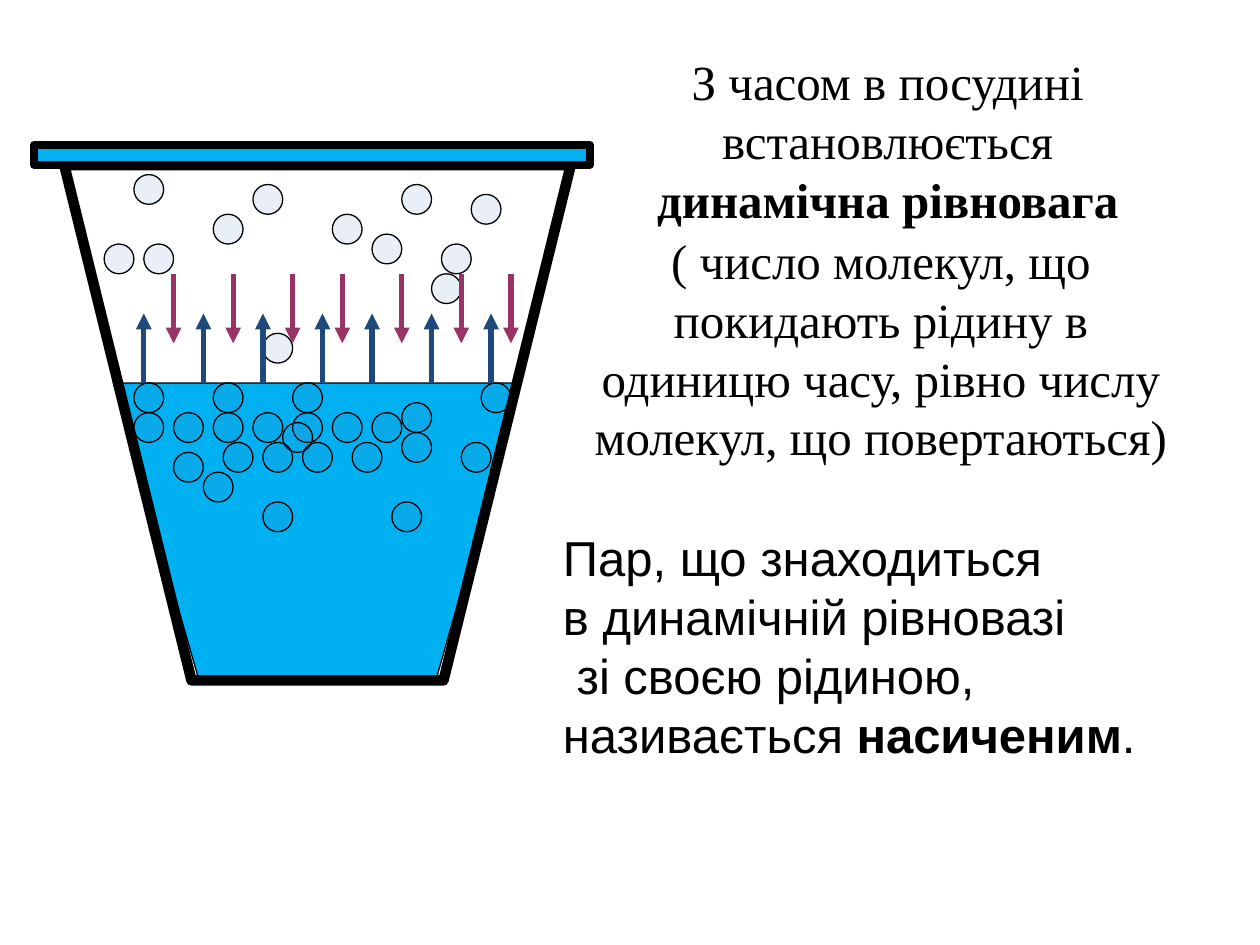
from pptx import Presentation
from pptx.dml.color import RGBColor
from pptx.enum.shapes import MSO_CONNECTOR, MSO_SHAPE
from pptx.enum.text import MSO_AUTO_SIZE, PP_ALIGN
from pptx.oxml.ns import qn
from pptx.util import Inches, Mm, Pt
from lxml.etree import SubElement

# Content: (left, top, width, height), font, alignment, paragraphs of (text, bold) runs
TEXTS = [
    ((4.84, 0.36, 4.41, 1.5), "Times New Roman", PP_ALIGN.CENTER,
     [[("З часом в посудині встановлюється ", False), ("динамічна рівновага", True)]]),
    ((4.45, 1.78, 5.08, 1.97), "Times New Roman", PP_ALIGN.CENTER,
     [[("( число молекул, що покидають рідину в одиницю часу, "
        "рівно числу молекул, що повертаються)", False)]]),
    ((4.37, 4.14, 5.36, 1.97), "Arial", PP_ALIGN.LEFT,
     [[("Пар, що знаходиться", False)],
      [("в динамічній рівновазі", False)],
      [(" зі своєю рідиною, називається ", False), ("насиченим", True), (".", False)]]),
]

# Molecules: grid row -> grid columns
VAPOUR = {0: [3], 1: [15, 30], 2: [37], 4: [11, 23], 6: [27], 7: [0, 4, 34],
          10: [33], 16: [16]}
LIQUID = {21: [3, 11, 19, 38], 23: [30], 24: [3, 7, 11, 15, 19, 23, 27], 25: [18],
          26: [30], 27: [12, 16, 20, 25, 36], 28: [7], 30: [10], 33: [16, 29]}

# Arrows: grid columns, start row, end row, colour name
ARROWS = [([4, 10, 16, 22, 27, 33, 39], 21, 14, "rising"),
          ([7, 13, 19, 24, 30, 36, 41], 10, 17, "falling")]

# Vessel outlines in inches
WATER = [(0.9, 3.04), (1.58, 5.4), (3.46, 5.4), (4.13, 3.04)]
VESSEL = [(0.51, 1.31), (1.52, 5.4), (3.52, 5.4), (4.53, 1.31)]
LID = (0.27, 1.15, 4.41, 0.16)

THEME = {"ink": "000000", "water": "00B0F0", "molecule": "4F81BD",
         "rising": "1F497D", "falling": "993366",
         "size": 28, "thin": 0.75, "arrow": 3, "lid": 4.5, "wall": 6,
         "molecule_alpha": 12}

# Molecule and arrow grid
STEP, LEFT, TOP = Mm(2), Mm(21), Mm(35.2)
DIAMETER = 3 * STEP


def color(name):
    return RGBColor.from_string(THEME[name])


def grid(col, row):
    return LEFT + col * STEP, TOP + row * STEP


def style(sp, fill, width):
    sp.shadow.inherit = False
    if fill:
        sp.fill.solid()
        sp.fill.fore_color.rgb = color(fill)
    else:
        sp.fill.background()
    sp.line.color.rgb = color("ink")
    sp.line.width = Pt(THEME[width])


def add_outline(s, points, fill, width):
    corners = [(Inches(x), Inches(y)) for x, y in points]
    builder = s.shapes.build_freeform(*corners[0])
    builder.add_line_segments(corners[1:], close=True)
    style(builder.convert_to_shape(), fill, width)


def add_molecules(s, rows):
    for row, cols in rows.items():
        for col in cols:
            sp = s.shapes.add_shape(MSO_SHAPE.OVAL, *grid(col, row), DIAMETER, DIAMETER)
            style(sp, "molecule", "thin")
            clr = sp.fill._xPr.find(".//" + qn("a:srgbClr"))
            SubElement(clr, qn("a:alpha"), val=str(THEME["molecule_alpha"] * 1000))


def add_arrow(s, col, start, end, name):
    c = s.shapes.add_connector(MSO_CONNECTOR.STRAIGHT, *grid(col, start), *grid(col, end))
    c.line.color.rgb = color(name)
    c.line.width = Pt(THEME["arrow"])
    SubElement(c.line._get_or_add_ln(), qn("a:tailEnd"), type="triangle")
    SubElement(c._element.spPr, qn("a:effectLst"))


def add_text(s, box, font, align, paragraphs):
    tf = s.shapes.add_textbox(*map(Inches, box)).text_frame
    tf.word_wrap = True
    tf.auto_size = MSO_AUTO_SIZE.SHAPE_TO_FIT_TEXT
    for i, runs in enumerate(paragraphs):
        p = tf.add_paragraph() if i else tf.paragraphs[0]
        p.alignment = align
        for text, bold in runs:
            r = p.add_run()
            r.text = text
            r.font.name, r.font.size, r.font.bold = font, Pt(THEME["size"]), bold
            r.font.color.rgb = color("ink")


def main():
    prs = Presentation()
    prs.slide_width, prs.slide_height = Inches(10), Inches(7.5)
    s = prs.slides.add_slide(prs.slide_layouts[6])

    # Explanations
    for text in TEXTS:
        add_text(s, *text)

    # Vessel with water and lid
    add_outline(s, WATER, "water", "thin")
    add_outline(s, VESSEL, None, "wall")
    style(s.shapes.add_shape(MSO_SHAPE.RECTANGLE, *map(Inches, LID)), "water", "lid")

    # Molecules, then evaporation and condensation arrows
    add_molecules(s, VAPOUR)
    add_molecules(s, LIQUID)
    for cols, start, end, name in ARROWS:
        for col in cols:
            add_arrow(s, col, start, end, name)

    prs.save("out.pptx")


if __name__ == "__main__":
    main()
